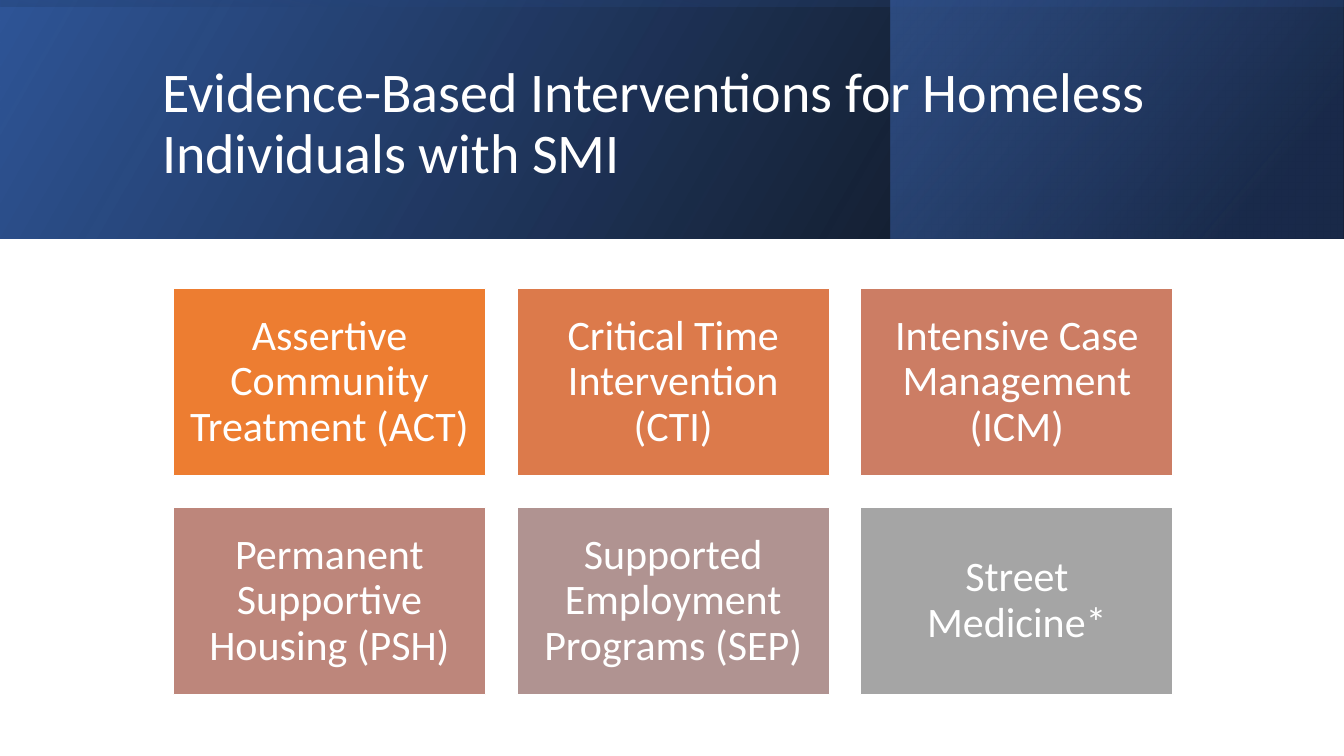
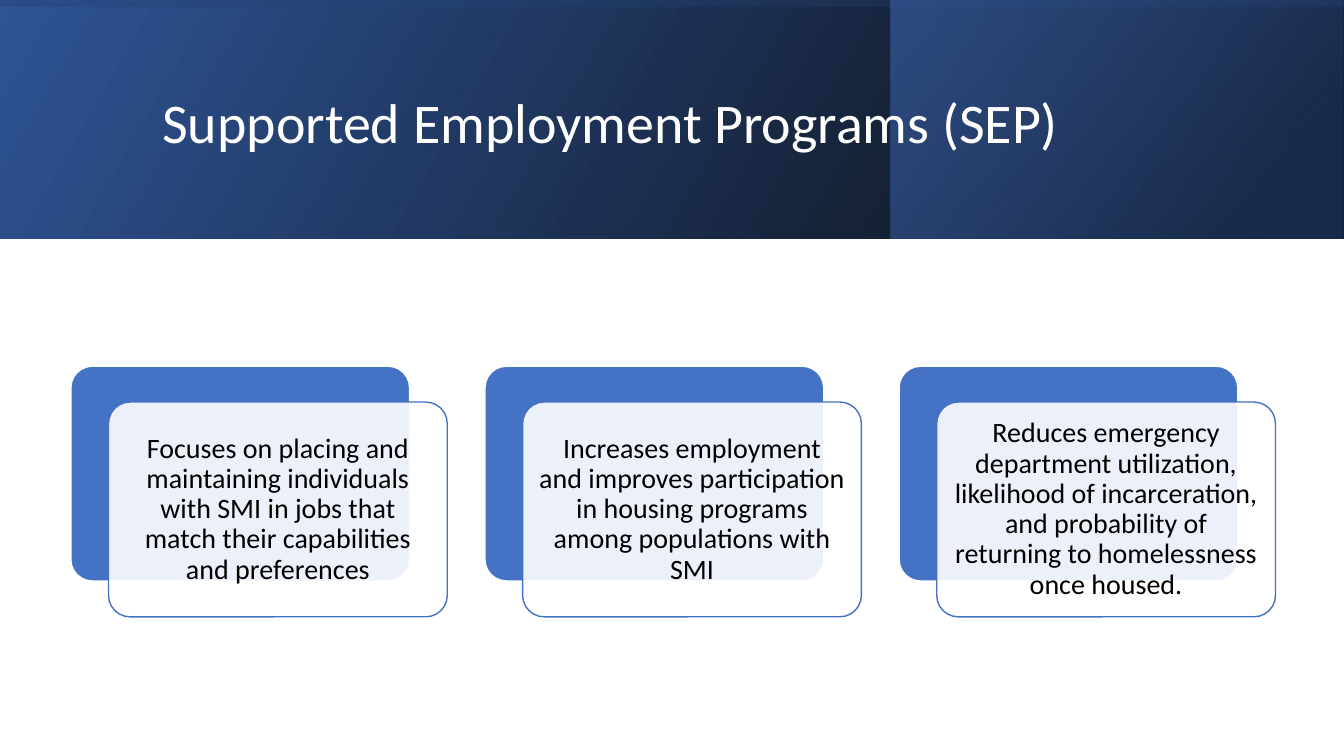
import pptx
import pptx.dml.color
import pptx.enum.shapes
import pptx.enum.text
import pptx.oxml
import pptx.oxml.ns
import pptx.util
import lxml.etree

Pt = pptx.util.Pt
RGBColor = pptx.dml.color.RGBColor
qn = pptx.oxml.ns.qn
RECTANGLE = pptx.enum.shapes.MSO_SHAPE.RECTANGLE
ROUNDED = pptx.enum.shapes.MSO_SHAPE.ROUNDED_RECTANGLE

COLORS = {
    "white": "FFFFFF",
    "black": "000000",
    "blue": "4472C4",
    "deep_blue": "2F5597",
    "navy": "203864",
}
FONT = "Calibri"
SLIDE_WIDTH, SLIDE_HEIGHT = 960, 540
BAND_HEIGHT = 170.6
TURNED_OFFSET = (SLIDE_WIDTH - BAND_HEIGHT) / 2

BAND_LAYERS = [
    ((0, 0, SLIDE_WIDTH, BAND_HEIGHT), 0, 30,
     [(0, "black", 96), (1, "deep_blue", 100)]),
    ((636.5, 0, 322.8, BAND_HEIGHT), 0, 40,
     [(0.19, "navy", 68), (1, "blue", 48)]),
    ((TURNED_OFFSET, -TURNED_OFFSET, BAND_HEIGHT, SLIDE_WIDTH), 270, 10,
     [(0.23, "deep_blue", 16), (0.99, "black", 45)]),
]


def add_box(slide, kind, bounds, fill=None, line=None, opacity=100):
    shape = slide.shapes.add_shape(kind, *[Pt(length) for length in bounds])
    shape.shadow.inherit = False
    if fill:
        shape.fill.solid()
        shape.fill.fore_color.rgb = RGBColor.from_string(fill)
        if opacity < 100:
            color = shape._element.spPr.find(".//" + qn("a:srgbClr"))
            lxml.etree.SubElement(color, qn("a:alpha"), val=str(opacity * 1000))
    if line:
        shape.line.color.rgb = RGBColor.from_string(line)
        shape.line.width = Pt(1)
    else:
        shape.line.fill.background()
    if kind == ROUNDED:
        shape.adjustments[0] = 0.1
    return shape


def write_text(shape, text, size, color, alignment, inset):
    frame = shape.text_frame
    frame.text = text
    frame.word_wrap = True
    frame.vertical_anchor = pptx.enum.text.MSO_ANCHOR.MIDDLE
    frame.margin_left = frame.margin_right = Pt(inset[0])
    frame.margin_top = frame.margin_bottom = Pt(inset[1])
    paragraph = frame.paragraphs[0]
    paragraph.alignment = alignment
    paragraph.line_spacing = 0.9
    font = paragraph.runs[0].font
    font.name = FONT
    font.size = Pt(size)
    font.color.rgb = RGBColor.from_string(COLORS[color])


LEFT = pptx.enum.text.PP_ALIGN.LEFT
CENTER = pptx.enum.text.PP_ALIGN.CENTER

presentation = pptx.Presentation()
presentation.slide_width = Pt(SLIDE_WIDTH)
presentation.slide_height = Pt(SLIDE_HEIGHT)

slides = []
for title in [
    "Evidence-Based Interventions for Homeless Individuals with SMI",
    "Supported Employment Programs (SEP)",
]:
    slide = presentation.slides.add_slide(presentation.slide_layouts[6])
    for bounds, rotation, angle, stops in BAND_LAYERS:
        layer = add_box(slide, RECTANGLE, bounds)
        layer.rotation = rotation
        properties = layer._element.spPr
        properties.find(qn("a:xfrm")).set("flipH", "1")
        layer.fill.gradient()
        layer.fill.gradient_angle = angle
        for stop, (position, color, opacity) in zip(layer.fill.gradient_stops, stops):
            stop.position = position
            stop.color.rgb = RGBColor.from_string(COLORS[color])
        gradient_colors = properties.find(qn("a:gradFill")).iter(qn("a:srgbClr"))
        for element, (position, color, opacity) in zip(gradient_colors, stops):
            lxml.etree.SubElement(element, qn("a:alpha"), val=str(opacity * 1000))
    title_box = slide.shapes.add_textbox(Pt(108.8), Pt(27.4), Pt(765.4), Pt(123.8))
    write_text(title_box, title, 40, "white", LEFT, (7.2, 3.6))
    slides.append(slide)

interventions_slide, employment_slide = slides

INTERVENTIONS = [
    ("Assertive Community Treatment (ACT)", "ED7D31"),
    ("Critical Time Intervention (CTI)", "DC7A4B"),
    ("Intensive Case Management (ICM)", "CC7D64"),
    ("Permanent Supportive Housing (PSH)", "BD867B"),
    ("Supported Employment Programs (SEP)", "B09391"),
    ("Street Medicine*", "A5A5A5"),
]
for index, (text, fill) in enumerate(INTERVENTIONS):
    row, column = divmod(index, 3)
    bounds = (123.8 + column * 245.5, 206 + row * 156.4, 223.2, 133.9)
    tile = add_box(interventions_slide, RECTANGLE, bounds, fill, COLORS["white"])
    write_text(tile, text, 30, "white", CENTER, (8.6, 8.6))

OUTCOMES = [
    "Focuses on placing and maintaining individuals with SMI in jobs that match "
    "their capabilities and preferences",
    "Increases employment and improves participation in housing programs among "
    "populations with SMI",
    "Reduces emergency department utilization, likelihood of incarceration, and "
    "probability of returning to homelessness once housed.",
]
CARD_WIDTH, CARD_HEIGHT = 242, 153.4
for index, text in enumerate(OUTCOMES):
    left, top = 50.6 + index * 295.8, 261.6
    add_box(employment_slide, ROUNDED, (left, top, CARD_WIDTH, CARD_HEIGHT),
            COLORS["blue"], COLORS["white"])
    card = add_box(employment_slide, ROUNDED,
                   (left + 26.9, top + 25.6, CARD_WIDTH, CARD_HEIGHT),
                   COLORS["white"], COLORS["blue"], 90)
    write_text(card, text, 20, "black", CENTER, (7, 7))

presentation.save("out.pptx")
